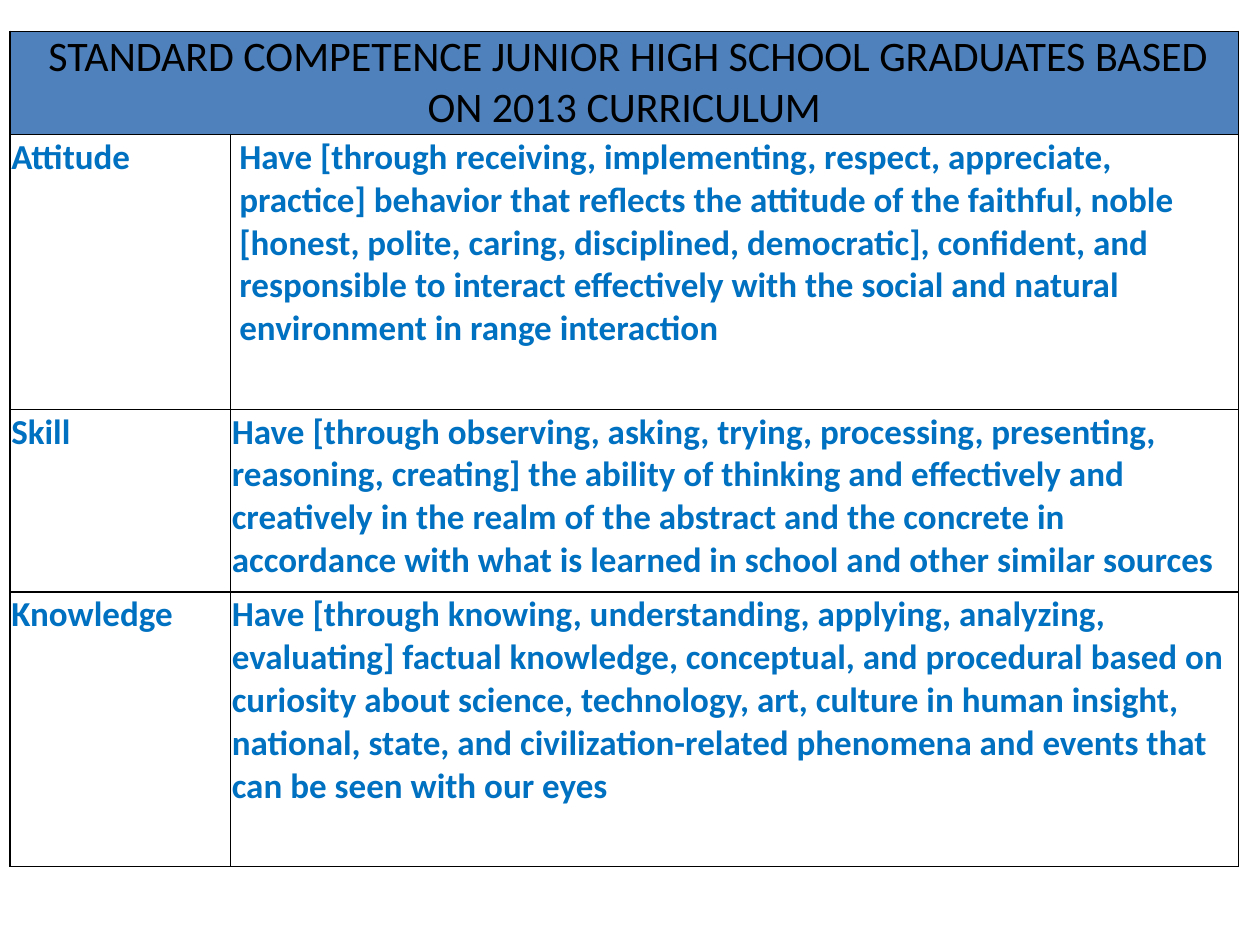
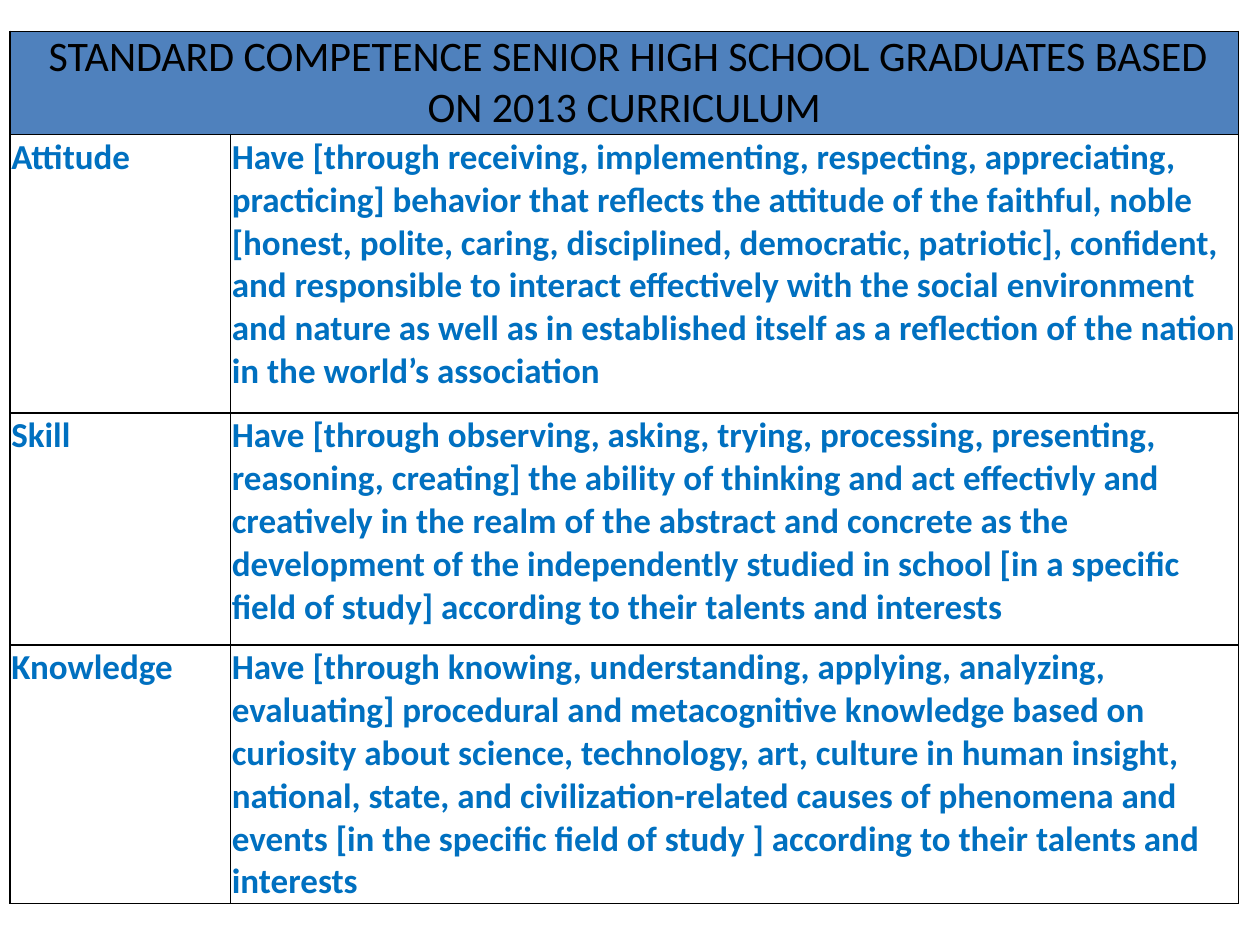
from dataclasses import dataclass

from lxml import etree
from pptx import Presentation
from pptx.dml.color import RGBColor
from pptx.enum.text import MSO_ANCHOR, PP_ALIGN
from pptx.oxml.ns import qn
from pptx.util import Inches, Pt

CENTER, LEFT = PP_ALIGN.CENTER, PP_ALIGN.LEFT
MIDDLE, TOP = MSO_ANCHOR.MIDDLE, MSO_ANCHOR.TOP

# Shared look
COLORS = {"band": "4F81BD", "title": "000000", "body": "0070C0", "border": "000000"}
FONT = "Calibri"
SLIDE_W, SLIDE_H = Inches(10), Inches(7.5)
BORDER_W = Pt(1)
INDENT = Inches(0.06)

# Table grid in percent of the slide's width and height
TABLE_LEFT, TABLE_TOP = 0.8, 3.33
COLUMNS = (17.5, 80)
TITLE_ROW = 10.93


@dataclass(frozen=True)
class Competence:
    name: str
    text: str
    height: float  # percent of the slide's height
    margin: int = 0


@dataclass(frozen=True)
class Standard:
    school: str
    competences: tuple[Competence, ...]


@dataclass(frozen=True)
class CellStyle:
    size: int
    color: str
    bold: bool
    align: PP_ALIGN
    anchor: MSO_ANCHOR
    inset: float
    fill: str | None = None
    first_line: int = 0


TITLE = CellStyle(24, "title", False, CENTER, MIDDLE, 0, "band", INDENT)
BODY = CellStyle(20, "body", True, LEFT, TOP, 0.01)

STANDARDS = (
    Standard("JUNIOR", (
        Competence(
            "Attitude",
            "Have [through receiving, implementing, respect, appreciate, practice] "
            "behavior that reflects the attitude of the faithful, noble [honest, polite, "
            "caring, disciplined, democratic], confident, and responsible to interact "
            "effectively with the social and natural environment in range interaction",
            29.07, INDENT),
        Competence(
            "Skill",
            "Have [through observing, asking, trying, processing, presenting, reasoning, "
            "creating] the ability of thinking and effectively and creatively in the realm "
            "of the abstract and the concrete in accordance with what is learned in school "
            "and other similar sources",
            19.33),
        Competence(
            "Knowledge",
            "Have [through knowing, understanding, applying, analyzing, evaluating] factual "
            "knowledge, conceptual, and procedural based on curiosity about science, "
            "technology, art, culture in human insight, national, state, and "
            "civilization-related phenomena and events that can be seen with our eyes",
            29.07),
    )),
    Standard("SENIOR", (
        Competence(
            "Attitude",
            "Have [through receiving, implementing, respecting, appreciating, practicing] "
            "behavior that reflects the attitude of the faithful, noble [honest, polite, "
            "caring, disciplined, democratic, patriotic], confident, and responsible to "
            "interact effectively with the social environment and nature as well as in "
            "established itself as a reflection of the nation in the world’s association",
            29.47),
        Competence(
            "Skill",
            "Have [through observing, asking, trying, processing, presenting, reasoning, "
            "creating] the ability of thinking and act effectivly and creatively in the "
            "realm of the abstract and concrete as the development of the independently "
            "studied in school [in a specific field of study] according to their talents "
            "and interests",
            24.53),
        Competence(
            "Knowledge",
            "Have [through knowing, understanding, applying, analyzing, evaluating] "
            "procedural and metacognitive knowledge based on curiosity about science, "
            "technology, art, culture in human insight, national, state, and "
            "civilization-related causes of phenomena and events [in the specific field of "
            "study ] according to their talents and interests",
            27.33),
    )),
)


def across(percent: float) -> int:
    return round(SLIDE_W * percent / 100)


def down(percent: float) -> int:
    return round(SLIDE_H * percent / 100)


def add_borders(cell) -> None:
    tc_pr = cell._tc.get_or_add_tcPr()
    for i, side in enumerate(("a:lnL", "a:lnR", "a:lnT", "a:lnB")):
        ln = etree.Element(qn(side), w=str(BORDER_W))
        fill = etree.SubElement(ln, qn("a:solidFill"))
        etree.SubElement(fill, qn("a:srgbClr"), val=COLORS["border"])
        tc_pr.insert(i, ln)


def format_cell(cell, style: CellStyle) -> None:
    if style.fill:
        cell.fill.solid()
        cell.fill.fore_color.rgb = RGBColor.from_string(COLORS[style.fill])
    else:
        cell.fill.background()
    cell.vertical_anchor = style.anchor
    cell.margin_left = cell.margin_right = cell.margin_top = Inches(style.inset)
    cell.margin_bottom = 0
    add_borders(cell)


def write_cell(cell, text: str, style: CellStyle, margin: int = 0) -> None:
    p = cell.text_frame.paragraphs[0]
    p.alignment = style.align
    p_pr = p._p.get_or_add_pPr()
    p_pr.set("marL", str(margin))
    p_pr.set("indent", str(style.first_line))
    r = p.add_run()
    r.text = text
    r.font.name, r.font.size, r.font.bold = FONT, Pt(style.size), style.bold
    r.font.color.rgb = RGBColor.from_string(COLORS[style.color])


def add_standard(prs, standard: Standard) -> None:
    s = prs.slides.add_slide(prs.slide_layouts[6])
    heights = [TITLE_ROW] + [c.height for c in standard.competences]
    table = s.shapes.add_table(
        len(heights), len(COLUMNS), across(TABLE_LEFT), down(TABLE_TOP),
        across(sum(COLUMNS)), down(sum(heights))).table
    table.first_row = table.horz_banding = False
    for column, width in zip(table.columns, COLUMNS):
        column.width = across(width)
    for i, (row, height) in enumerate(zip(table.rows, heights)):
        row.height = down(height)
        for cell in row.cells:
            format_cell(cell, BODY if i else TITLE)

    # Title band across both columns
    table.cell(0, 0).merge(table.cell(0, 1))
    write_cell(table.cell(0, 0), f"STANDARD COMPETENCE {standard.school} HIGH SCHOOL "
               "GRADUATES BASED ON 2013 CURRICULUM", TITLE)

    # One row per competence
    for i, competence in enumerate(standard.competences, start=1):
        write_cell(table.cell(i, 0), competence.name, BODY)
        write_cell(table.cell(i, 1), competence.text, BODY, competence.margin)


def main() -> None:
    prs = Presentation()
    prs.slide_width, prs.slide_height = SLIDE_W, SLIDE_H
    for standard in STANDARDS:
        add_standard(prs, standard)
    prs.save("out.pptx")


if __name__ == "__main__":
    main()
